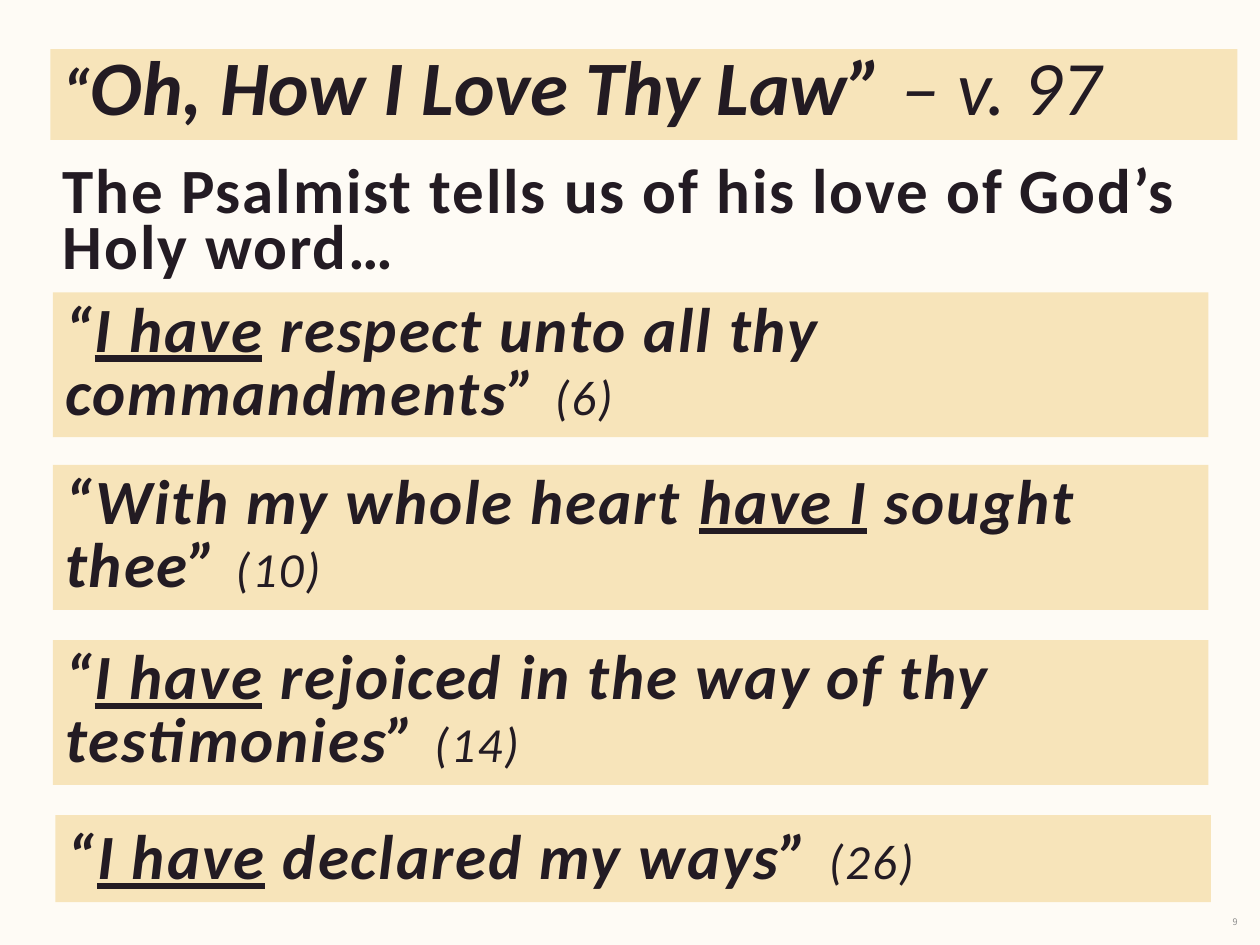
from pptx import Presentation
from pptx.dml.color import RGBColor
from pptx.enum import shapes, text
from pptx.util import Inches, Pt

COLORS = {"paper": "FEFBF5", "band": "F7E4BA", "ink": "231B23", "number": "8D8D8D"}
FONT = "Calibri"

# Content: each run is (words, style changes)
HEADING = [("“", {"size": 37}), ("Oh, How I Love Thy Law” ", {}), ("– v. 97", {"bold": False})]
INTRO = [("The Psalmist tells us of his love of God’s Holy word…", {})]
PAGE_NUMBER = [("9", {})]
UNDERLINED = {"underline": True}
REFERENCE = {"size": 28, "bold": False}
VERSES = [
    # left, top, height, line spacing, runs
    (0.42, 2.32, 1.15, 36, [("“", {}), ("I have", UNDERLINED),
                            (" respect unto all thy commandments” ", {}), ("(6)", REFERENCE)]),
    (0.42, 3.69, 1.15, 36, [("“With my whole heart ", {}), ("have I", UNDERLINED),
                            (" sought thee” ", {}), ("(10)", REFERENCE)]),
    (0.42, 5.08, 1.15, 36, [("“", {}), ("I have", UNDERLINED),
                            (" rejoiced in the way of thy testimonies” ", {}), ("(14)", REFERENCE)]),
    (0.44, 6.47, 0.69, 40, [("“", {}), ("I have", UNDERLINED), (" declared my ways”", {}),
                            (" ", {"size": 40}), ("(26)", REFERENCE)]),
]
VERSE_STYLE = {"size": 36, "bold": True, "italic": True, "spacing": 1.1}


def rgb(name):
    return RGBColor.from_string(COLORS[name])


def write(box, runs, style, line=None, anchor=text.MSO_ANCHOR.TOP, align=text.PP_ALIGN.LEFT):
    frame = box.text_frame
    frame.word_wrap = True
    frame.vertical_anchor = anchor
    para = frame.paragraphs[0]
    para.alignment = align
    if line:
        para.line_spacing = Pt(line)
    for words, changes in runs:
        look = {**style, **changes}
        span = para.add_run()
        span.text = words
        font = span.font
        font.name = look.get("font", FONT)
        font.size = Pt(look["size"])
        font.bold = look.get("bold", False)
        font.italic = look.get("italic", False)
        if look.get("underline"):
            font.underline = True
        font.color.rgb = rgb(look.get("color", "ink"))
        if "spacing" in look:
            font._element.set("spc", str(round(look["spacing"] * 100)))


def add_band(page, left, top, width, height):
    band = page.shapes.add_shape(shapes.MSO_SHAPE.RECTANGLE, *map(Inches, (left, top, width, height)))
    band.shadow.inherit = False
    band.fill.solid()
    band.fill.fore_color.rgb = rgb("band")
    band.line.fill.background()
    return band


def add_text_box(page, *place):
    return page.shapes.add_textbox(*map(Inches, place))


def main():
    deck = Presentation()
    deck.slide_width, deck.slide_height = Inches(10), Inches(7.5)
    page = deck.slides.add_slide(deck.slide_layouts[6])
    page.background.fill.solid()
    page.background.fill.fore_color.rgb = rgb("paper")

    # Introduction and page number
    write(add_text_box(page, 0.4, 1.3, 9.6, 1), INTRO,
          {"size": 36, "bold": True, "spacing": 1.1}, line=32)
    write(add_text_box(page, 7.67, 7.19, 2.25, 0.25), PAGE_NUMBER,
          {"size": 5.2, "font": "Noto Sans CJK JP", "color": "number"},
          anchor=text.MSO_ANCHOR.MIDDLE, align=text.PP_ALIGN.RIGHT)

    # Heading band
    write(add_band(page, 0.4, 0.39, 9.42, 0.72), HEADING,
          {"size": 44, "bold": True, "italic": True}, line=43)

    # Verse bands
    for left, top, height, line, runs in VERSES:
        write(add_band(page, left, top, 9.17, height), runs, VERSE_STYLE, line,
              anchor=text.MSO_ANCHOR.MIDDLE)

    deck.save("out.pptx")


if __name__ == "__main__":
    main()
